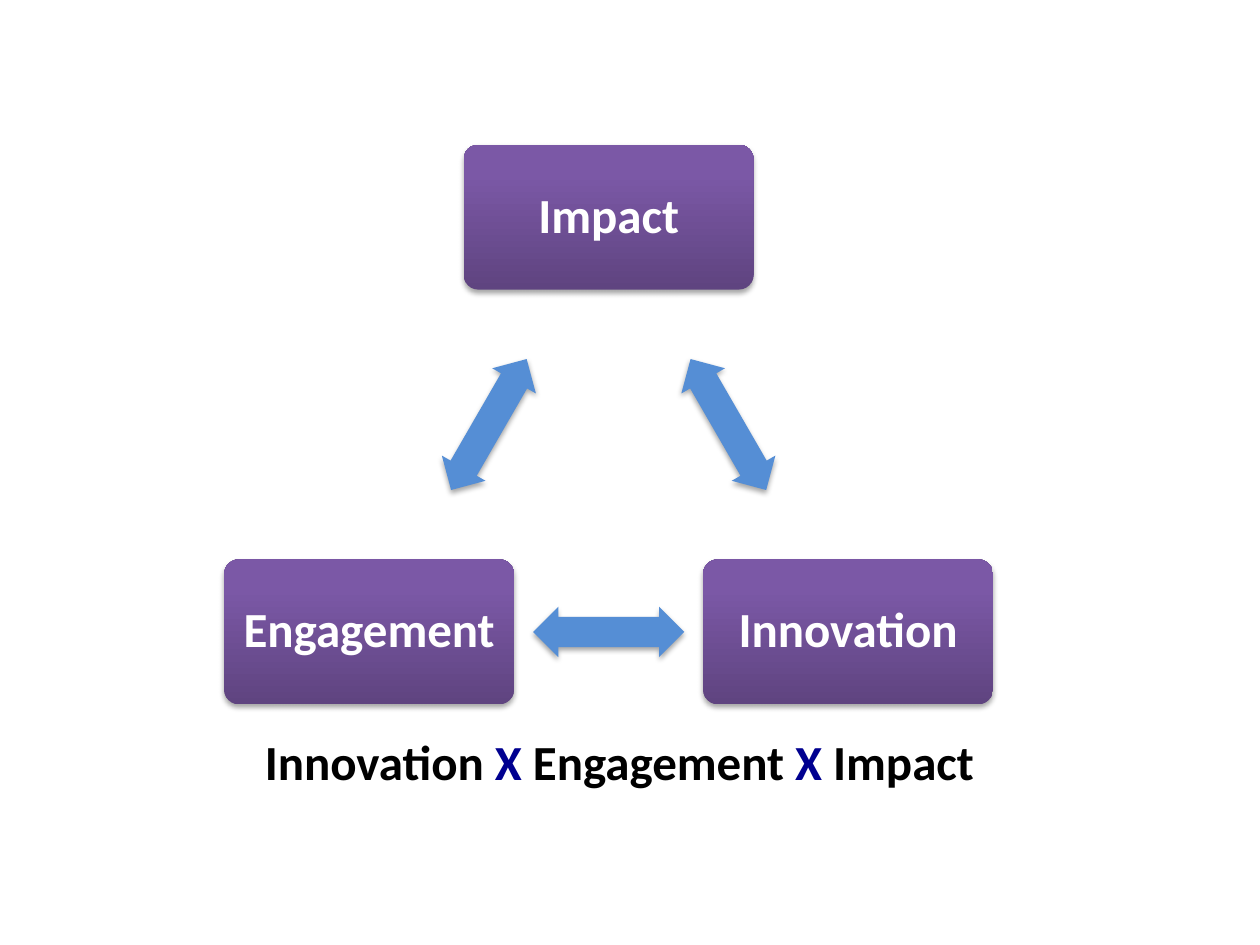
from copy import deepcopy
from dataclasses import dataclass
from math import atan2, cos, degrees, radians, sin

from lxml.etree import SubElement
from pptx import Presentation
from pptx.dml.color import RGBColor
from pptx.enum.shapes import MSO_SHAPE as Shape
from pptx.enum.text import MSO_ANCHOR as Anchor, MSO_AUTO_SIZE as AutoSize, PP_ALIGN as Align
from pptx.oxml.ns import qn
from pptx.util import Pt

WHITE = RGBColor(0xFF, 0xFF, 0xFF)
BLACK = RGBColor(0x00, 0x00, 0x00)
NAVY = RGBColor(0x00, 0x00, 0x90)
BLUE = RGBColor(0x55, 0x8E, 0xD5)
PURPLES = [
    (0, RGBColor(0x5F, 0x44, 0x80)),
    (0.8, RGBColor(0x7B, 0x58, 0xA6)),
    (1, RGBColor(0x7C, 0x57, 0xA8)),
]
CENTER_X, CENTER_Y, RADIUS = 347.8, 282.1, 158
NODE_W, NODE_H = 165.6, 82.8
ARROW_W, ARROW_H = 86.4, 28.8


@dataclass
class Node:
    label: str
    angle: float

    @property
    def x(self) -> float:
        return CENTER_X + RADIUS * cos(radians(self.angle))

    @property
    def y(self) -> float:
        return CENTER_Y + RADIUS * sin(radians(self.angle))


@dataclass
class TextRun:
    text: str
    color: RGBColor


NODES = [Node("Impact", -90), Node("Innovation", 30), Node("Engagement", 150)]
FORMULA = [
    TextRun("Innovation ", BLACK),
    TextRun("X", NAVY),
    TextRun(" Engagement ", BLACK),
    TextRun("X", NAVY),
    TextRun(" Impact", BLACK),
]


def add_runs(p, runs: list[TextRun]) -> None:
    p.alignment = Align.CENTER
    for run in runs:
        r = p.add_run()
        r.text = run.text
        r.font.name = "Calibri"
        r.font.size = Pt(28)
        r.font.bold = True
        r.font.color.rgb = run.color


def add_centered(s, kind: Shape, x: float, y: float, w: float, h: float):
    sp = s.shapes.add_shape(kind, Pt(x - w / 2), Pt(y - h / 2), Pt(w), Pt(h))
    sp.line.fill.background()
    sp.shadow.inherit = False
    effects = sp.element.spPr.find(qn("a:effectLst"))
    shadow = SubElement(
        effects, qn("a:outerShdw"), blurRad=str(Pt(3.1)), dist=str(Pt(1.8)),
        dir="5400000", rotWithShape="0",
    )
    color = SubElement(shadow, qn("a:srgbClr"), val=str(BLACK))
    SubElement(color, qn("a:alpha"), val="35000")
    return sp


def fill_purple(sp) -> None:
    sp.fill.gradient()
    sp.fill.gradient_angle = 90
    stop_list = sp.element.spPr.find(qn("a:gradFill")).find(qn("a:gsLst"))
    stop_list.append(deepcopy(stop_list[-1]))
    for stop, (position, color) in zip(sp.fill.gradient_stops, PURPLES):
        stop.position = position
        stop.color.rgb = color


def add_node(s, node: Node) -> None:
    sp = add_centered(s, Shape.ROUNDED_RECTANGLE, node.x, node.y, NODE_W, NODE_H)
    sp.adjustments[0] = 0.1
    fill_purple(sp)
    tf = sp.text_frame
    tf.word_wrap = True
    tf.vertical_anchor = Anchor.MIDDLE
    tf.margin_left = tf.margin_right = tf.margin_top = tf.margin_bottom = Pt(8)
    p = tf.paragraphs[0]
    p.line_spacing = 0.9
    add_runs(p, [TextRun(node.label, WHITE)])


def add_arrow(s, start: Node, end: Node) -> None:
    x, y = (start.x + end.x) / 2, (start.y + end.y) / 2
    sp = add_centered(s, Shape.LEFT_RIGHT_ARROW, x, y, ARROW_W, ARROW_H)
    sp.rotation = round(degrees(atan2(end.y - start.y, end.x - start.x))) % 360
    sp.adjustments[0] = 0.6
    sp.adjustments[1] = 0.5
    sp.fill.solid()
    sp.fill.fore_color.rgb = BLUE


def add_formula(s) -> None:
    tf = s.shapes.add_textbox(Pt(113.8), Pt(414.7), Pt(480.2), Pt(41)).text_frame
    tf.word_wrap = True
    tf.auto_size = AutoSize.SHAPE_TO_FIT_TEXT
    add_runs(tf.paragraphs[0], FORMULA)


def main() -> None:
    prs = Presentation()
    prs.slide_width, prs.slide_height = Pt(720), Pt(540)
    s = prs.slides.add_slide(prs.slide_layouts[6])
    for start, end in zip(NODES, NODES[1:] + NODES[:1]):
        add_node(s, start)
        add_arrow(s, start, end)
    add_formula(s)
    prs.save("out.pptx")


if __name__ == "__main__":
    main()
